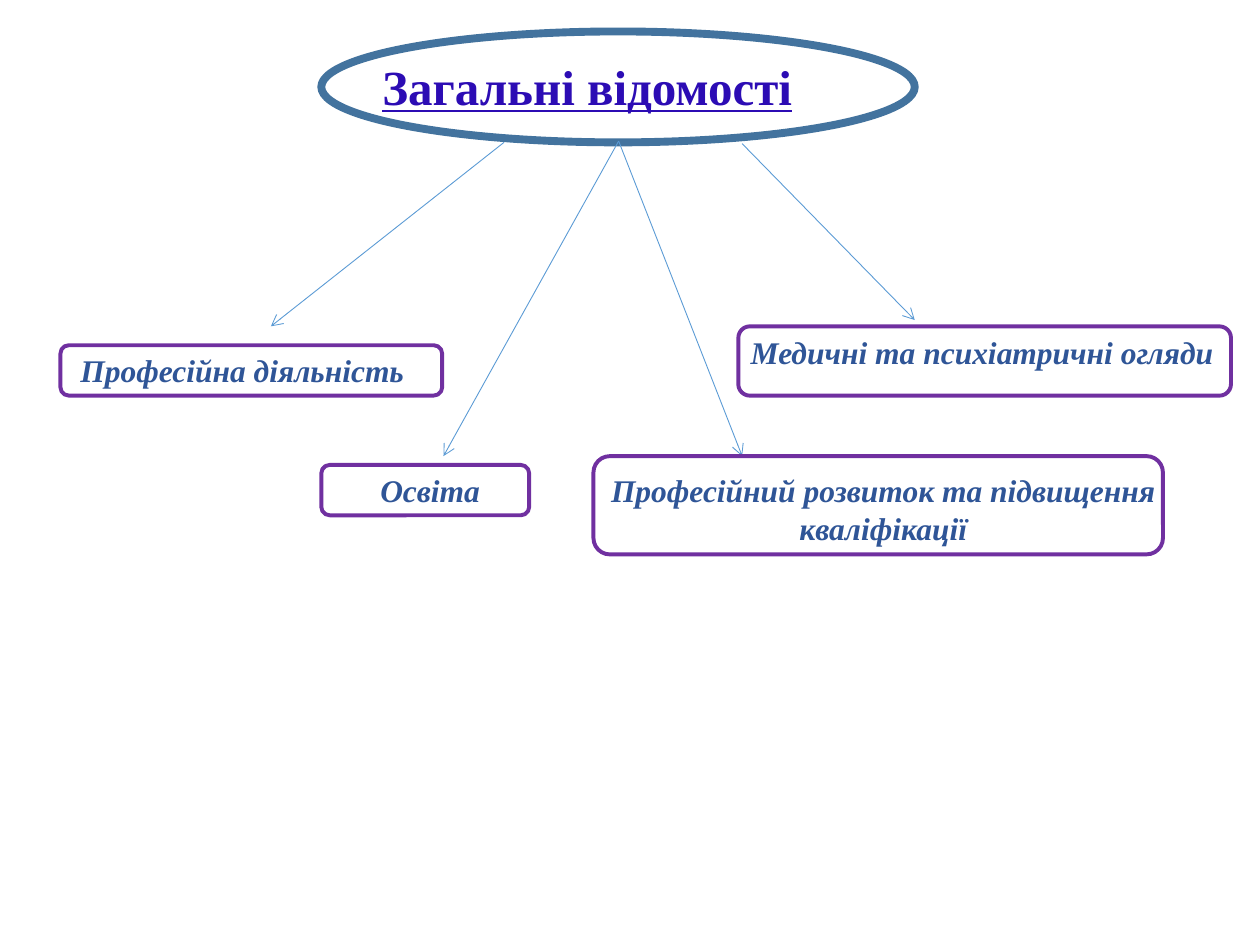
from lxml import etree
from pptx import Presentation
from pptx.dml.color import RGBColor
from pptx.enum.shapes import MSO_CONNECTOR, MSO_SHAPE
from pptx.enum.text import MSO_AUTO_SIZE, PP_ALIGN
from pptx.oxml.ns import qn
from pptx.util import Inches, Pt

ELLIPSE, ROUNDED = MSO_SHAPE.OVAL, MSO_SHAPE.ROUNDED_RECTANGLE
STRAIGHT = MSO_CONNECTOR.STRAIGHT
LEFT, CENTER = PP_ALIGN.LEFT, PP_ALIGN.CENTER
FIT_TEXT = MSO_AUTO_SIZE.SHAPE_TO_FIT_TEXT

FONT = "Times New Roman"
TITLE_COLOR, TITLE_FRAME = "2C0CB4", "43739E"
TOPIC_COLOR, TOPIC_FRAME = "2F5597", "7030A0"
ARROW_COLOR = "5B9BD5"

TITLE = "Загальні відомості"
TITLE_AREA = (2.45, 0.4, 4.42, 0.57)
ELLIPSE_AREA = (2.55, 0.25, 4.71, 0.88)

# label, label area, frame area, wrapped and centred, arrow start, arrow end
TOPICS = [
    ("Професійна діяльність", (0.54, 2.74, 2.8, 0.4),
     (0.48, 2.74, 3.03, 0.4), False, (4, 1.13), (2.15, 2.59)),
    ("Освіта", (2.92, 3.69, 1, 0.4),
     (2.55, 3.69, 1.65, 0.4), False, (4.91, 1.12), (3.52, 3.62)),
    ("Професійний розвиток та\u00a0підвищення кваліфікації", (4.51, 3.69, 5, 0.71),
     (4.71, 3.62, 4.52, 0.78), True, (4.91, 1.12), (5.89, 3.62)),
    ("Медичні та\u00a0психіатричні огляди", (5.86, 2.59, 3.91, 0.4),
     (5.86, 2.59, 3.91, 0.55), False, (5.89, 1.14), (7.26, 2.54)),
]


def rgb(value):
    return RGBColor.from_string(value)


def add_text(page, text, area, *, size, color, wrap=True, italic=False, underline=False):
    box = page.shapes.add_textbox(*map(Inches, area))
    frame = box.text_frame
    frame.word_wrap = wrap
    frame.auto_size = FIT_TEXT
    para = frame.paragraphs[0]
    para.alignment = CENTER if wrap else LEFT
    span = para.add_run()
    span.text = text
    font = span.font
    font.name, font.size, font.color.rgb = FONT, Pt(size), rgb(color)
    font.bold, font.italic, font.underline = True, italic, underline


def add_outline(page, kind, area, color, width):
    shape = page.shapes.add_shape(kind, *map(Inches, area))
    shape.shadow.inherit = False
    shape.fill.background()
    shape.line.color.rgb = rgb(color)
    shape.line.width = Pt(width)


def add_arrow(page, start, end):
    arrow = page.shapes.add_connector(STRAIGHT, *map(Inches, start + end))
    arrow.line.color.rgb = rgb(ARROW_COLOR)
    arrow.line.width = Pt(0.5)
    etree.SubElement(arrow.line._get_or_add_ln(), qn("a:tailEnd"), type="arrow")
    etree.SubElement(arrow._element.spPr, qn("a:effectLst"))


def main():
    deck = Presentation()
    deck.slide_width, deck.slide_height = Inches(10), Inches(7.5)
    page = deck.slides.add_slide(deck.slide_layouts[6])

    add_text(page, TITLE, TITLE_AREA, size=28, color=TITLE_COLOR, underline=True)
    add_outline(page, ELLIPSE, ELLIPSE_AREA, TITLE_FRAME, 4.5)
    for label, label_area, frame_area, wrap, start, end in TOPICS:
        add_arrow(page, start, end)
        add_outline(page, ROUNDED, frame_area, TOPIC_FRAME, 2.25)
        add_text(page, label, label_area, size=18, color=TOPIC_COLOR,
                 wrap=wrap, italic=True)

    deck.save("out.pptx")


if __name__ == "__main__":
    main()
